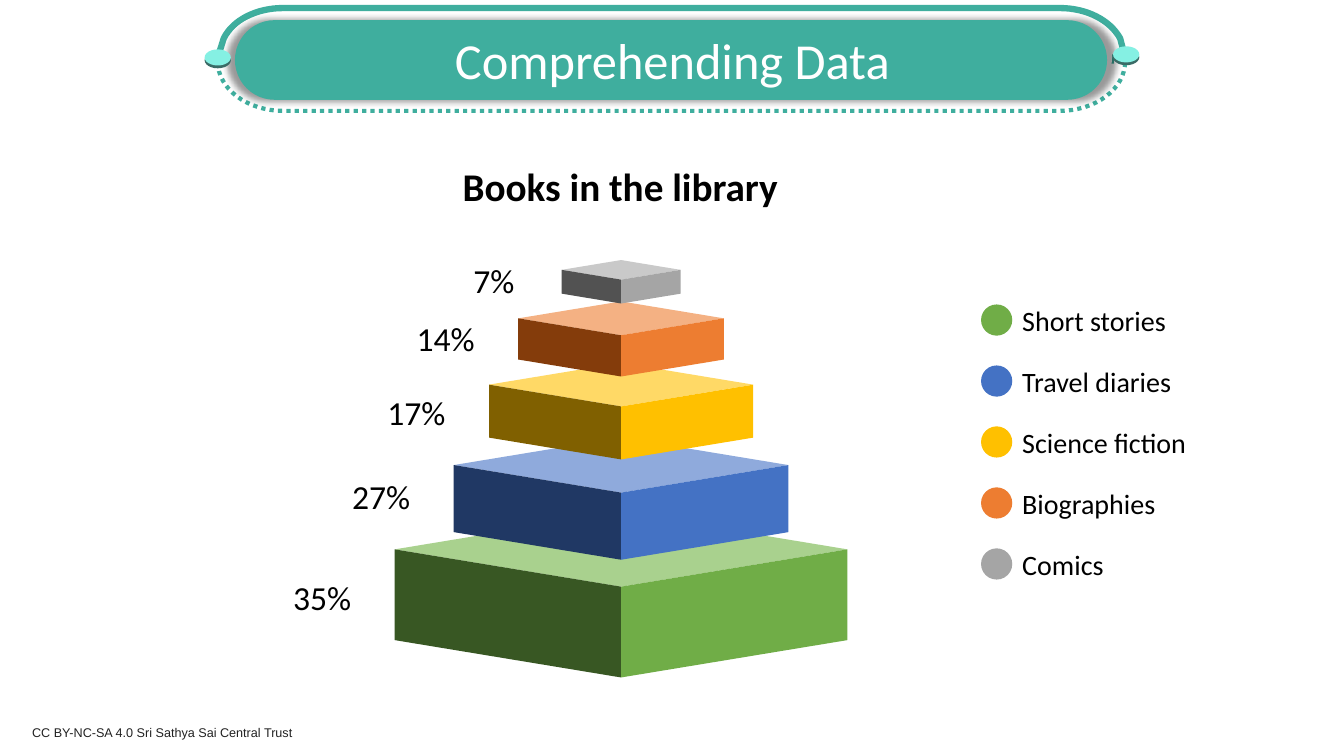
from dataclasses import dataclass

from lxml.etree import SubElement as Sub
from pptx import Presentation
from pptx.dml.color import RGBColor as Rgb
from pptx.enum.dml import MSO_LINE as Dash
from pptx.enum.shapes import MSO_SHAPE as Kind
from pptx.enum.text import MSO_ANCHOR as Anchor, PP_ALIGN as Align
from pptx.oxml.ns import qn
from pptx.shapes.autoshape import Shape
from pptx.util import Inches, Pt

Point = tuple[float, float]

HUES = {
    "white": "FFFFFF", "black": "000000", "note": "222222",
    "teal": "3FAE9E", "aqua": "85F0E3", "rim": "3A6B66",
    "green": "70AD47", "green top": "A9D18E", "green dark": "385723",
    "blue": "4472C4", "blue top": "8FAADC", "blue dark": "203864",
    "gold": "FFC000", "gold top": "FFD966", "gold dark": "806000",
    "orange": "ED7D31", "orange top": "F4B183", "orange dark": "843C0B",
    "gray": "A5A5A5", "gray top": "C9C9C9", "gray dark": "525252",
}
MID = 6.16
SLANT = 0.165
DEPTH = 0.283
PITCH = 0.605


@dataclass
class Tier:
    name: str
    share: str
    hue: str
    wide: float
    top: float
    label: float
    gap: float = 1.34


@dataclass
class Rail:
    start: Point
    bends: list[list[Point]]
    width: float
    dash: Dash


@dataclass
class Glow:
    hue: str
    alpha: int
    blur: float
    dist: float
    scale: int = 100


TIERS = [
    Tier("Short stories", "35%", "green", 4.49, 5.08, 5.67),
    Tier("Travel diaries", "27%", "blue", 3.32, 4.34, 4.67),
    Tier("Science fiction", "17%", "gold", 2.62, 3.6, 3.84),
    Tier("Biographies", "14%", "orange", 2.04, 2.99, 3.1),
    Tier("Comics", "7%", "gray", 1.18, 2.58, 2.53, 1.29),
]
RAILS = [
    Rail((2.81, 0.08), [
        [(10.51, 0.08)],
        [(10.78, 0.08), (11.01, 0.2), (11.11, 0.38)],
        [(11.16, 0.57)], [(2.16, 0.57)], [(2.22, 0.38)],
        [(2.31, 0.2), (2.54, 0.08), (2.81, 0.08)],
    ], 4.5, Dash.SOLID),
    Rail((2.16, 0.61), [
        [(11.16, 0.61)],
        [(11.16, 0.88), (10.87, 1.1), (10.51, 1.1)],
        [(2.81, 1.1)],
        [(2.45, 1.1), (2.16, 0.88), (2.16, 0.61)],
    ], 3, Dash.ROUND_DOT),
]


def tint(hue: str) -> Rgb:
    return Rgb.from_string(HUES[hue])


def curve(a: Point, b: Point, c: Point, d: Point, steps: int = 16) -> list[Point]:
    def at(t: float, i: int) -> float:
        u = 1 - t
        return u**3 * a[i] + 3 * u * u * t * b[i] + 3 * u * t * t * c[i] + t**3 * d[i]
    return [(at(n / steps, 0), at(n / steps, 1)) for n in range(1, steps + 1)]


def add_rail(shapes, rail: Rail) -> None:
    dots = [rail.start]
    for bend in rail.bends:
        dots += curve(dots[-1], *bend) if len(bend) == 3 else bend
    spots = [(Inches(x), Inches(y)) for x, y in dots]
    form = shapes.build_freeform(*spots[0])
    form.add_line_segments(spots[1:], close=True)
    shape = form.convert_to_shape()
    shape.shadow.inherit = False
    shape.fill.solid()
    shape.fill.fore_color.rgb = tint("white")
    shape.line.color.rgb = tint("teal")
    shape.line.width = Pt(rail.width)
    shape.line.dash_style = rail.dash


def add_form(shapes, kind: Kind, x: float, y: float, w: float, h: float,
             hue: str) -> Shape:
    shape = shapes.add_shape(kind, Inches(x), Inches(y), Inches(w), Inches(h))
    shape.shadow.inherit = False
    shape.fill.solid()
    shape.fill.fore_color.rgb = tint(hue)
    shape.line.fill.background()
    return shape


def add_glow(shape: Shape, glow: Glow) -> None:
    zone = shape.element.spPr.find(qn("a:effectLst"))
    size = str(glow.scale * 1000)
    cast = Sub(zone, qn("a:outerShdw"), blurRad=str(Pt(glow.blur)),
               dist=str(Pt(glow.dist)), dir="5400000", sx=size, sy=size,
               algn="ctr", rotWithShape="0")
    tone = Sub(cast, qn("a:srgbClr"), val=HUES[glow.hue])
    Sub(tone, qn("a:alpha"), val=str(glow.alpha * 1000))


def set_text(box, text: str, size: float, hue: str = "black",
             align: Align = Align.LEFT, font: str = "Calibri",
             bold: bool = False) -> None:
    frame = box.text_frame
    frame.word_wrap = True
    frame.vertical_anchor = Anchor.TOP
    frame.text = text
    para = frame.paragraphs[0]
    para.alignment = align
    para.font.name = font
    para.font.size = Pt(size)
    para.font.bold = bold
    para.font.color.rgb = tint(hue)


def add_text(shapes, x: float, y: float, w: float, h: float, text: str,
             size: float, **style) -> None:
    box = shapes.add_textbox(Inches(x), Inches(y), Inches(w), Inches(h))
    set_text(box, text, size, **style)


def add_tier(shapes, tier: Tier) -> None:
    group = shapes.add_group_shape().shapes
    half, slope, tall = tier.wide / 2, tier.wide * SLANT, tier.wide * DEPTH
    left = MID - half
    add_form(group, Kind.FLOWCHART_DECISION, left, tier.top, tier.wide, slope,
             f"{tier.hue} top")
    mid = tier.top + slope / 2 + tall / 2
    for side, hue in ((-1, f"{tier.hue} dark"), (1, tier.hue)):
        hub = MID + side * half / 2
        face = add_form(group, Kind.PARALLELOGRAM, hub - tall / 2,
                        mid - half / 2, tall, half, hue)
        face.adjustments[0] = slope / 2 / tall
        face.rotation = 90
        if side > 0:
            face.element.spPr.xfrm.set("flipV", "1")
    add_text(shapes, left - tier.gap, tier.label, 1.24, 0.5, tier.share, 24,
             align=Align.CENTER)


def add_banner(slide) -> None:
    shapes = slide.shapes
    for rail in RAILS:
        add_rail(shapes, rail)
    back = add_form(shapes, Kind.ROUNDED_RECTANGLE, 2.22, 0.16, 8.81, 0.81, "white")
    front = add_form(shapes, Kind.ROUNDED_RECTANGLE, 2.33, 0.2, 8.65, 0.79, "teal")
    for pill in (back, front):
        pill.adjustments[0] = 0.5
    add_glow(front, Glow("black", 40, 5, 0, 102))
    for x, y in ((11.04, 0.46), (2.03, 0.49)):
        knob = add_form(shapes, Kind.OVAL, x, y, 0.26, 0.16, "aqua")
        add_glow(knob, Glow("rim", 100, 0, 2))
    title = shapes.title
    title.left, title.top = Inches(2.58), Inches(0.24)
    title.width, title.height = Inches(8.18), Inches(0.71)
    set_text(title, "Comprehending Data", 36, "white", Align.CENTER)
    title.element.getparent().append(title.element)


def main() -> None:
    deck = Presentation()
    deck.slide_width, deck.slide_height = Inches(13.33), Inches(7.5)
    slide = deck.slides.add_slide(deck.slide_layouts[5])
    shapes = slide.shapes
    add_text(shapes, 0.22, 7.14, 6.67, 0.25,
             "CC BY-NC-SA 4.0 Sri Sathya Sai Central Trust", 9,
             hue="note", font="Arial")
    add_banner(slide)
    add_text(shapes, 4.24, 1.56, 3.82, 0.57, "Books in the library", 28,
             align=Align.CENTER, bold=True)
    for row, tier in enumerate(TIERS):
        add_tier(shapes, tier)
        y = 3.02 + row * PITCH
        add_form(shapes, Kind.OVAL, 9.73, y, 0.31, 0.31, tier.hue)
        add_text(shapes, 10.04, y - 0.06, 2.04, 0.44, tier.name, 20)
    deck.save("out.pptx")


if __name__ == "__main__":
    main()
